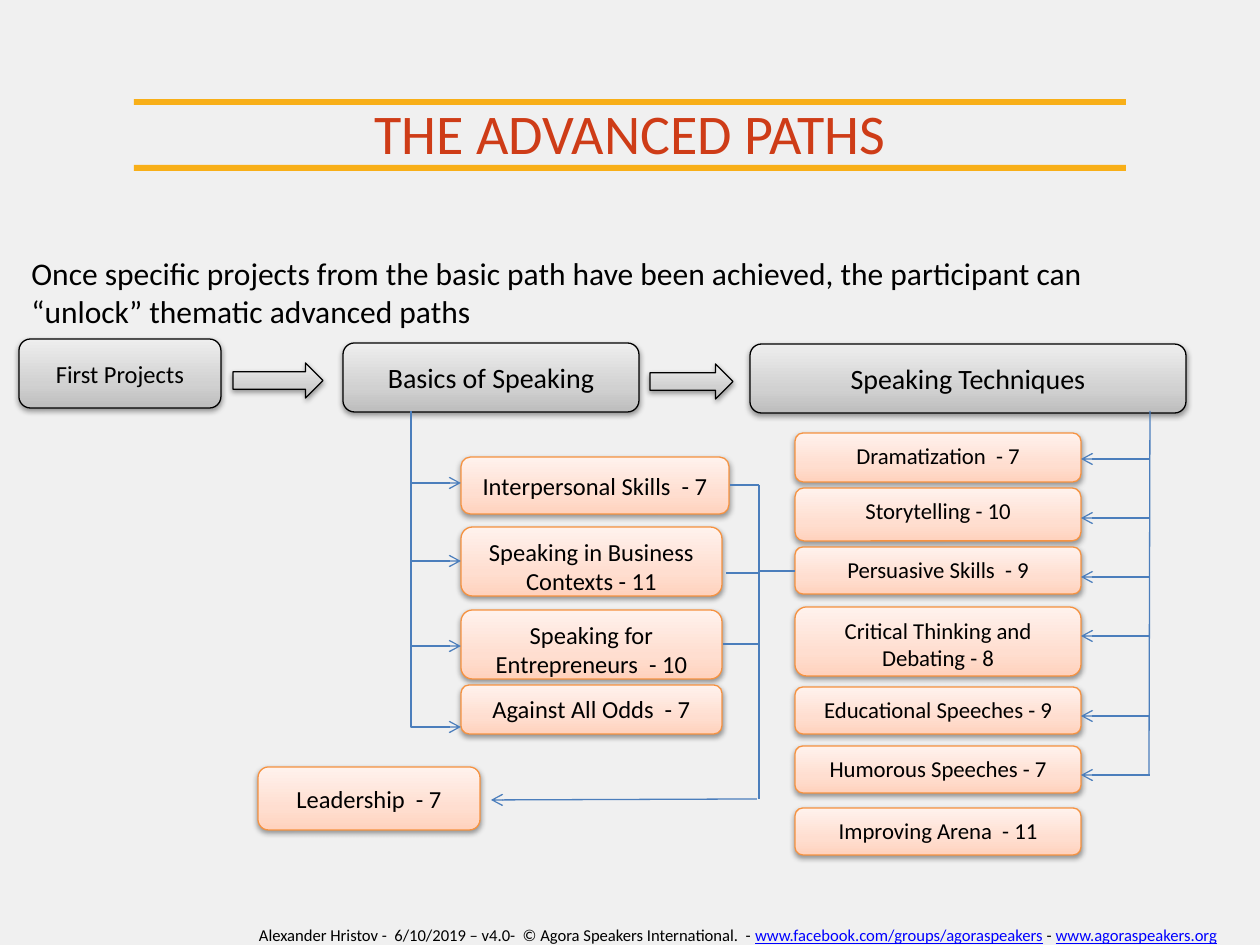
from dataclasses import dataclass
from lxml.etree import SubElement
from pptx import Presentation
from pptx.dml.color import RGBColor
from pptx.enum.shapes import MSO_CONNECTOR, MSO_SHAPE
from pptx.enum.text import MSO_ANCHOR, PP_ALIGN
from pptx.oxml import parse_xml
from pptx.oxml.ns import nsdecls, qn
from pptx.util import Pt


@dataclass(frozen=True)
class Theme:
    font: str = "Calibri"
    background: str = "F0F0F0"
    rule: str = "F8AF18"
    title: str = "CE3C17"
    text: str = "000000"
    link: str = "0000FF"
    wire: str = "4B7EBC"
    grey: tuple = ("BDBDBD", "D1D1D1", "EEEEEE")
    peach: tuple = ("FFD2BD", "FFDED0", "FFF2ED")
    peach_edge: str = "F69240"
    title_size: float = 32
    intro_size: float = 18
    stage_size: float = 16
    path_size: float = 14
    technique_size: float = 13
    footer_size: float = 9.5
    line_width: float = 0.75


THEME = Theme()
EMU_PER_PX = 914400 / 126

# Content: labels with their places in px
TITLE = "THE ADVANCED PATHS"
INTRO = ("Once specific projects from the basic path have been achieved, "
         "the participant can “unlock” thematic advanced paths")
FOOTER = [
    ("Alexander Hristov -  6/10/2019 – v4.0-  © Agora Speakers International.  - ", False),
    ("www.facebook.com/groups/agoraspeakers", True),
    (" - ", False),
    ("www.agoraspeakers.org", True),
]
STAGES = [  # label, left, top, width, size
    ("First Projects", 19, 339, 202, THEME.path_size),
    ("Basics of Speaking", 343, 343, 296, THEME.stage_size),
    ("Speaking Techniques", 750, 344, 436, THEME.stage_size),
]
STAGE_HEIGHT = 69
STAGE_ARROWS = [(233, 363, 90, 35), (650, 364, 83, 35)]
BASICS_PATHS = [  # label, box, anchor
    ("Interpersonal Skills  - 7", (461, 457, 268, 57), MSO_ANCHOR.MIDDLE),
    ("Speaking in Business Contexts - 11", (461, 527, 261, 69), MSO_ANCHOR.TOP),
    ("Speaking for Entrepreneurs  - 10", (461, 610, 261, 69), MSO_ANCHOR.TOP),
    ("Against All Odds  - 7", (461, 685, 261, 49), MSO_ANCHOR.TOP),
    ("Leadership  - 7", (258, 767, 222, 63), MSO_ANCHOR.MIDDLE),
]
TECHNIQUES = [  # label, top, height
    ("Dramatization  - 7", 433, 49),
    ("Storytelling - 10", 488, 53),
    ("Persuasive Skills  - 9", 547, 47),
    ("Critical Thinking and Debating - 8", 607, 69),
    ("Educational Speeches - 9", 687, 47),
    ("Humorous Speeches - 7", 746, 47),
    ("Improving Arena  - 11", 808, 47),
]
TECHNIQUE_LEFT, TECHNIQUE_WIDTH = 795, 286
BASICS_TRUNK, BASICS_EDGE = 411, 461
BASICS_BRANCHES = [(411, 483), (428, 561), (514, 646), (595, 727)]  # start y, end y
TECHNIQUE_TRUNK = 1150
TECHNIQUE_BRANCHES = [459, 518, 577, 636, 716, 775]
LEADERSHIP_TRUNK = 759
LEADERSHIP_FEEDS = [(730, 759, 485), (726, 760, 573), (759, 795, 571), (723, 759, 644)]


def px(value):
    return round(value * EMU_PER_PX)


def add_run(paragraph, text, size, color=THEME.text, underline=None):
    run = paragraph.add_run()
    run.text = text
    run.font.name, run.font.size = THEME.font, Pt(size)
    run.font.color.rgb = RGBColor.from_string(color)
    run.font.underline = underline


def write(shape, runs, size, align=PP_ALIGN.CENTER, anchor=MSO_ANCHOR.TOP, color=THEME.text):
    frame = shape.text_frame
    frame.word_wrap, frame.vertical_anchor = True, anchor
    paragraph = frame.paragraphs[0]
    paragraph.alignment = align
    for text, linked in runs:
        add_run(paragraph, text, size, THEME.link if linked else color, linked or None)


def add_text(slide, box, runs, size, **style):
    write(slide.shapes.add_textbox(*map(px, box)), runs, size, **style)


def add_panel(slide, kind, box, gradient, edge):
    """Shape with a three-stop gradient, thin edge and soft drop shadow."""
    panel = slide.shapes.add_shape(kind, *map(px, box))
    stops = "".join(f'<a:gs pos="{pos}"><a:srgbClr val="{color}"/></a:gs>'
                    for pos, color in zip((0, 35000, 100000), gradient))
    properties = panel._element.spPr
    properties.find(qn("a:prstGeom")).addnext(parse_xml(
        f'<a:gradFill {nsdecls("a")} rotWithShape="1"><a:gsLst>{stops}</a:gsLst>'
        '<a:lin ang="16200000" scaled="0"/></a:gradFill>'))
    panel.line.color.rgb = RGBColor.from_string(edge)
    panel.line.width = Pt(THEME.line_width)
    properties.append(parse_xml(
        f'<a:effectLst {nsdecls("a")}><a:outerShdw blurRad="40000" dist="20000" dir="5400000" '
        'rotWithShape="0"><a:srgbClr val="000000"><a:alpha val="38000"/></a:srgbClr>'
        '</a:outerShdw></a:effectLst>'))
    return panel


def add_path(slide, label, box, size, anchor=MSO_ANCHOR.TOP):
    panel = add_panel(slide, MSO_SHAPE.ROUNDED_RECTANGLE, box, THEME.peach, THEME.peach_edge)
    write(panel, [(label, False)], size, anchor=anchor)


def add_wire(slide, x1, y1, x2, y2, arrow=False, kind=MSO_CONNECTOR.STRAIGHT):
    wire = slide.shapes.add_connector(kind, px(x1), px(y1), px(x2), px(y2))
    wire.line.color.rgb = RGBColor.from_string(THEME.wire)
    wire.line.width = Pt(THEME.line_width)
    properties = wire._element.spPr
    if arrow:
        SubElement(properties.find(qn("a:ln")), qn("a:tailEnd"), type="arrow")
    SubElement(properties, qn("a:effectLst"))
    return properties


def add_bend(slide, x1, y1, x2, y2):
    """Arrow that goes down, then right: a one-corner elbow turned by 270 degrees."""
    run, drop = x2 - x1, y2 - y1
    left, top = (x1 + x2 - drop) / 2, (y1 + y2 - run) / 2
    properties = add_wire(slide, left, top, left + drop, top + run, True, MSO_CONNECTOR.ELBOW)
    properties.find(qn("a:prstGeom")).set("prst", "bentConnector2")
    frame = properties.find(qn("a:xfrm"))
    frame.set("rot", "16200000")
    frame.set("flipH", "1")


def main():
    deck = Presentation()
    deck.slide_width, deck.slide_height = px(1260), px(945)
    slide = deck.slides.add_slide(deck.slide_layouts[6])
    slide.background.fill.solid()
    slide.background.fill.fore_color.rgb = RGBColor.from_string(THEME.background)

    # Title rules, title, introduction and footer
    for top in (99, 165):
        rule = slide.shapes.add_shape(MSO_SHAPE.RECTANGLE, *map(px, (134, top, 992, 6)))
        rule.shadow.inherit = False
        rule.fill.solid()
        rule.fill.fore_color.rgb = RGBColor.from_string(THEME.rule)
        rule.line.fill.background()
    add_text(slide, (1, 92, 1258, 76), [(TITLE, False)], THEME.title_size, color=THEME.title)
    add_text(slide, (19, 248, 1167, 45), [(INTRO, False)], THEME.intro_size, align=PP_ALIGN.LEFT)
    add_text(slide, (207, 919, 1062, 32), FOOTER, THEME.footer_size)

    # Main stages and the arrows between them
    for label, left, top, width, size in STAGES:
        stage = add_panel(slide, MSO_SHAPE.ROUNDED_RECTANGLE,
                          (left, top, width, STAGE_HEIGHT), THEME.grey, THEME.text)
        write(stage, [(label, False)], size, anchor=MSO_ANCHOR.MIDDLE)
    for box in STAGE_ARROWS:
        add_panel(slide, MSO_SHAPE.RIGHT_ARROW, box, THEME.grey, THEME.text)

    # Advanced paths
    for label, box, anchor in BASICS_PATHS:
        add_path(slide, label, box, THEME.path_size, anchor)
    for label, top, height in TECHNIQUES:
        add_path(slide, label, (TECHNIQUE_LEFT, top, TECHNIQUE_WIDTH, height), THEME.technique_size)

    # Branches from the stages to their paths
    for start, end in BASICS_BRANCHES:
        add_bend(slide, BASICS_TRUNK, start, BASICS_EDGE, end)
    add_wire(slide, TECHNIQUE_TRUNK, 411, TECHNIQUE_TRUNK - 1, 776)
    for y in TECHNIQUE_BRANCHES:
        add_wire(slide, TECHNIQUE_TRUNK, y, TECHNIQUE_LEFT + TECHNIQUE_WIDTH, y, arrow=True)

    # Paths that lead on to leadership
    for start, end, y in LEADERSHIP_FEEDS:
        add_wire(slide, start, y, end, y)
    add_wire(slide, LEADERSHIP_TRUNK, 485, LEADERSHIP_TRUNK, 799)
    add_wire(slide, LEADERSHIP_TRUNK - 2, 799, 491, 800, arrow=True)

    deck.save("out.pptx")


if __name__ == "__main__":
    main()
